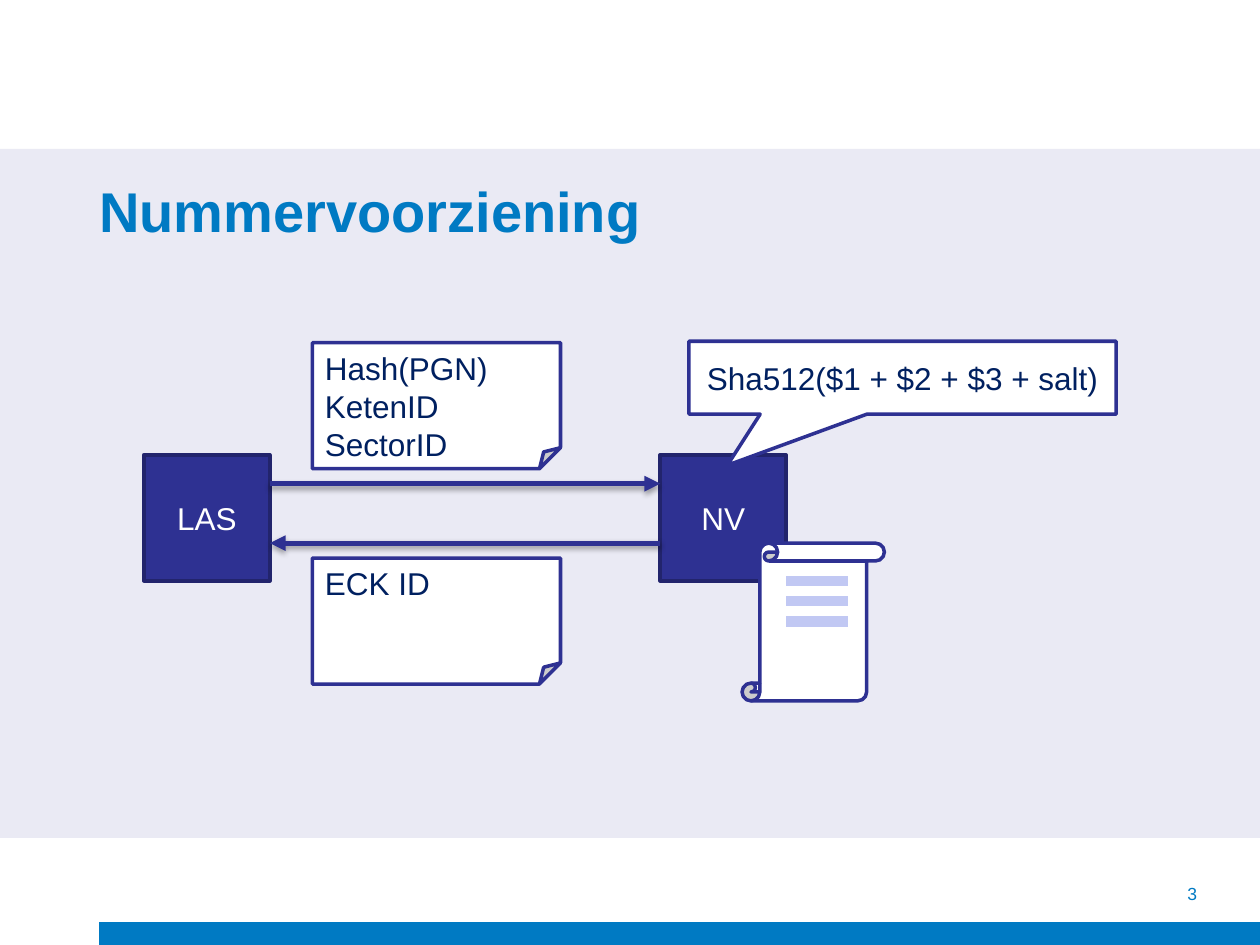
from lxml.etree import SubElement
from pptx import Presentation
from pptx.dml.color import RGBColor
from pptx.enum.shapes import MSO_CONNECTOR, MSO_SHAPE
from pptx.enum.text import MSO_ANCHOR, PP_ALIGN
from pptx.oxml.ns import qn
from pptx.util import Cm, Pt

COLORS = {
    "blue": "007AC3", "panel": "EAEAF4", "indigo": "2E3192", "edge": "22246C",
    "navy": "002060", "white": "FFFFFF", "stripe": "C1C8F3", "shadow": "000000",
}
TITLE = "Nummervoorziening"
PAGE_NUMBER = "3"
SYSTEMS = [("LAS", 2.9), ("NV", 13.31)]
MESSAGES = [(["Hash(PGN)", "KetenID", "SectorID"], 6.91), (["ECK ID"], 11.25)]
FORMULA = "Sha512($1 + $2 + $3 + salt)"

WIDTH, HEIGHT = 25.4, 19.05
MARGIN = 2
SIDE = 2.54
SYSTEM_TOP = 9.17
REQUEST_Y, REPLY_Y = 9.75, 10.95
STRIPE_TOP, STRIPE_STEP, STRIPE_COUNT = 11.71, 0.41, 3

CENTERED = {"align": PP_ALIGN.CENTER, "anchor": MSO_ANCHOR.MIDDLE}
TOP_LEFT = {"align": PP_ALIGN.LEFT, "anchor": MSO_ANCHOR.TOP}


def color(name):
    return RGBColor.from_string(COLORS[name])


def write(box, lines, ink, align, anchor, **font_format):
    frame = box.text_frame
    frame.word_wrap = True
    frame.vertical_anchor = anchor
    frame.text = "\n".join(lines)
    for para in frame.paragraphs:
        para.alignment = align
        values = {"name": "Arial", "size": Pt(18), "bold": False} | font_format
        for key, value in values.items():
            setattr(para.font, key, value)
        para.font.color.rgb = color(ink)


def add_box(page, kind, place, fill, edge=None):
    box = page.shapes.add_shape(kind, *map(Cm, place))
    box.shadow.inherit = False
    box.fill.solid()
    box.fill.fore_color.rgb = color(fill)
    if edge:
        box.line.color.rgb = color(edge)
        box.line.width = Pt(2)
    else:
        box.line.fill.background()
    return box


def add_line(page, start, end, y, ink, width):
    line = page.shapes.add_connector(
        MSO_CONNECTOR.STRAIGHT, Cm(start), Cm(y), Cm(end), Cm(y))
    line.line.color.rgb = color(ink)
    line.line.width = Pt(width)
    effects = SubElement(line._element.spPr, qn("a:effectLst"))
    return line, effects


def add_arrow(page, start, end, y):
    line, effects = add_line(page, start, end, y, "indigo", 3)
    SubElement(line.line._get_or_add_ln(), qn("a:tailEnd"), type="triangle")
    shadow = SubElement(
        effects, qn("a:outerShdw"), blurRad=str(Pt(3.1)), dist=str(Pt(1.8)),
        dir="5400000", rotWithShape="0")
    tint = SubElement(shadow, qn("a:srgbClr"), val=COLORS["shadow"])
    SubElement(tint, qn("a:alpha"), val="35000")


def add_title(page):
    title = page.shapes.title
    page.shapes._spTree.append(title._element)
    place = {"left": MARGIN, "top": 3.43, "width": 22.4, "height": 1.63}
    for key, value in place.items():
        setattr(title, key, Cm(value))
    for side in ("left", "top", "right", "bottom"):
        setattr(title.text_frame, f"margin_{side}", 0)
    write(title, [TITLE], "blue", PP_ALIGN.LEFT, MSO_ANCHOR.MIDDLE,
          size=Pt(32), bold=True)


def main():
    deck = Presentation()
    deck.slide_width, deck.slide_height = Cm(WIDTH), Cm(HEIGHT)
    page = deck.slides.add_slide(deck.slide_layouts[5])

    add_box(page, MSO_SHAPE.RECTANGLE, (MARGIN, 18.59, WIDTH - MARGIN, 0.46), "blue")
    add_box(page, MSO_SHAPE.RECTANGLE, (0, 3, WIDTH, 13.89), "panel")
    add_title(page)
    number = page.shapes.add_textbox(Cm(21.36), Cm(17.5), Cm(3.02), Cm(1.02))
    write(number, [PAGE_NUMBER], "blue", PP_ALIGN.RIGHT, MSO_ANCHOR.MIDDLE, size=Pt(10))

    for name, left in SYSTEMS:
        system = add_box(page, MSO_SHAPE.RECTANGLE,
                         (left, SYSTEM_TOP, SIDE, SIDE), "indigo", "edge")
        write(system, [name], "white", **CENTERED)

    las_edge, nv_edge = SYSTEMS[0][1] + SIDE, SYSTEMS[1][1]
    add_arrow(page, las_edge, nv_edge, REQUEST_Y)
    add_arrow(page, nv_edge, las_edge, REPLY_Y)

    for lines, top in MESSAGES:
        note = add_box(page, MSO_SHAPE.FOLDED_CORNER, (6.3, top, 5, SIDE), "white", "indigo")
        write(note, lines, "navy", **TOP_LEFT)

    callout = add_box(page, MSO_SHAPE.RECTANGULAR_CALLOUT,
                      (13.89, 6.88, 8.61, 1.47), "white", "indigo")
    callout.adjustments[0], callout.adjustments[1] = -0.41, 1.2
    write(callout, [FORMULA], "navy", **CENTERED)

    add_box(page, MSO_SHAPE.VERTICAL_SCROLL, (14.96, REPLY_Y, 2.87, 3.18), "white", "indigo")
    for index in range(STRIPE_COUNT):
        add_line(page, nv_edge + SIDE, 17.09, STRIPE_TOP + index * STRIPE_STEP, "stripe", 6)

    deck.save("out.pptx")


if __name__ == "__main__":
    main()
